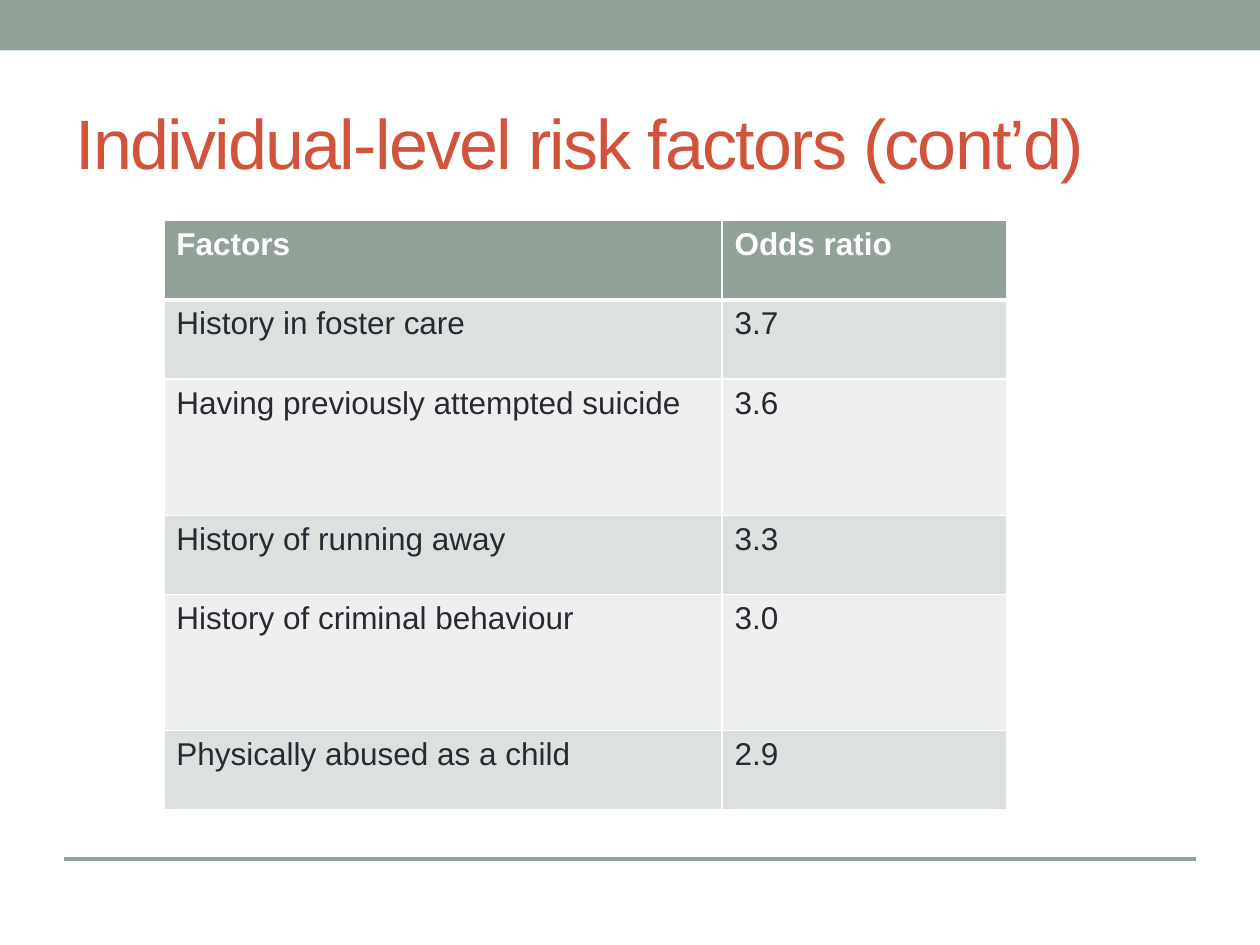
from lxml.etree import SubElement
from pptx import Presentation
from pptx.dml.color import RGBColor
from pptx.enum.shapes import MSO_CONNECTOR as CONN, MSO_SHAPE as SHAPE
from pptx.enum.text import MSO_ANCHOR as ANCHOR, PP_ALIGN as ALIGN
from pptx.oxml.ns import qn
from pptx.util import Inches, Pt

SAGE, RED, INK, WHITE = "93A299", "D2533C", "292934", "FFFFFF"
BANDS = ("DCE0DE", "EEF0EF")
ROWS = [
    ("Factors", "Odds ratio"),
    ("History in foster care", "3.7"),
    ("Having previously attempted suicide", "3.6"),
    ("History of running away", "3.3"),
    ("History of criminal behaviour", "3.0"),
    ("Physically abused as a child", "2.9"),
]
COL_WIDTHS = (4.43, 2.26)
SHORT, TALL = 0.63, 1.08
ROW_HEIGHTS = (SHORT, SHORT, TALL, SHORT, TALL, SHORT)


def rgb(value):
    """Turn a hex string into a colour."""
    return RGBColor.from_string(value)


def add_run(p, text, size, color, bold=False):
    """Add one formatted run to a paragraph."""
    r = p.add_run()
    r.text = text
    r.font.name = "Arial"
    r.font.size = Pt(size)
    r.font.bold = bold
    r.font.color.rgb = rgb(color)
    return r


def add_top_band(slide, x, y, w, h):
    """Draw the band along the top edge."""
    s = slide.shapes.add_shape(SHAPE.RECTANGLE, Inches(x), Inches(y), Inches(w), Inches(h))
    s.shadow.inherit = False
    s.fill.solid()
    s.fill.fore_color.rgb = rgb(SAGE)
    s.line.fill.background()


def add_footer_rule(slide, x, y, w):
    """Draw the horizontal rule above the footer."""
    line = slide.shapes.add_connector(CONN.STRAIGHT, Inches(x), Inches(y), Inches(x + w), Inches(y))
    line.line.color.rgb = rgb(SAGE)
    line.line.width = Pt(2.08)
    SubElement(line._element.spPr, qn("a:effectLst"))


def set_title(slide, x, y, w, h, text):
    """Place and format the title placeholder."""
    s = slide.shapes.title
    s.left, s.top, s.width, s.height = Inches(x), Inches(y), Inches(w), Inches(h)
    tf = s.text_frame
    tf.word_wrap = True
    tf.vertical_anchor = ANCHOR.MIDDLE
    p = tf.paragraphs[0]
    p.alignment = ALIGN.LEFT
    r = add_run(p, text, 40, RED)
    r._r.get_or_add_rPr().set("spc", "-100")


def set_borders(cell, top, bottom):
    """Give a cell white borders, with top and bottom widths in points."""
    tc_pr = cell._tc.get_or_add_tcPr()
    for tag, width in (("lnL", 1), ("lnR", 1), ("lnT", top), ("lnB", bottom)):
        ln = SubElement(tc_pr, qn(f"a:{tag}"), w=str(Pt(width)))
        fill = SubElement(ln, qn("a:solidFill"))
        SubElement(fill, qn("a:srgbClr"), val=WHITE)


def add_factor_table(slide, x, y):
    """Build the table of factors and odds ratios."""
    frame = slide.shapes.add_table(len(ROWS), len(COL_WIDTHS), Inches(x), Inches(y),
                                   Inches(sum(COL_WIDTHS)), Inches(sum(ROW_HEIGHTS)))
    table = frame.table
    for column, width in zip(table.columns, COL_WIDTHS):
        column.width = Inches(width)
    for i, (row, height, texts) in enumerate(zip(table.rows, ROW_HEIGHTS, ROWS)):
        row.height = Inches(height)
        header = i == 0
        for cell, text in zip(row.cells, texts):
            set_borders(cell, top=3 if i == 1 else 1, bottom=3 if header else 1)
            cell.fill.solid()
            cell.fill.fore_color.rgb = rgb(SAGE if header else BANDS[(i - 1) % 2])
            add_run(cell.text_frame.paragraphs[0], text, 18, WHITE if header else INK, header)


def main():
    """Build and save the slide."""
    prs = Presentation()
    prs.slide_width, prs.slide_height = Inches(10), Inches(7.5)
    slide = prs.slides.add_slide(prs.slide_layouts[5])
    add_top_band(slide, 0, 0, 10, 0.4)
    add_footer_rule(slide, 0.51, 6.82, 8.98)
    set_title(slide, 0.5, 0.58, 9, 1.08, "Individual-level risk factors (cont’d)")
    add_factor_table(slide, 1.3, 1.75)
    prs.save("out.pptx")


if __name__ == "__main__":
    main()
